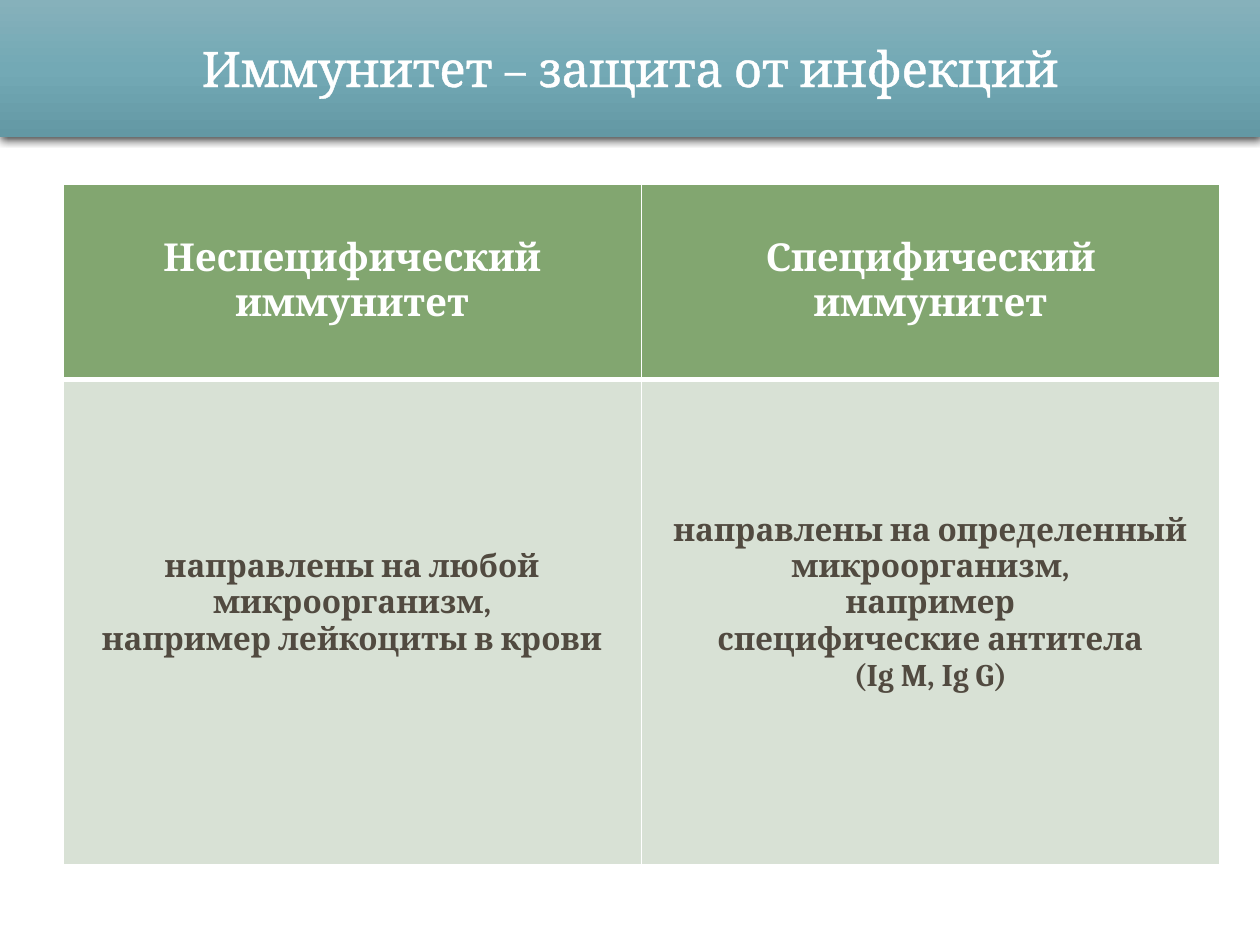
from dataclasses import dataclass

from lxml import etree
from pptx import Presentation
from pptx import util as u
from pptx.dml.color import RGBColor
from pptx.enum import shapes, text
from pptx.oxml import parse_xml
from pptx.oxml.ns import nsdecls, qn


@dataclass(frozen=True)
class Theme:
    font: str = "Cambria"
    white: str = "FFFFFF"
    body_text: str = "514A40"
    header_fill: str = "82A670"
    body_fill: str = "D8E1D5"
    shadow: str = "000000"
    band: tuple = ((0, "86B1BB"), (50, "73A9B5"), (100, "6398A4"))
    title_size: int = 28
    header_size: int = 22
    body_size: int = 18


def solid_line(tag, width, color):
    return parse_xml(
        f'<a:{tag} {nsdecls("a")} w="{u.Pt(width)}"><a:solidFill>'
        f'<a:srgbClr val="{color}"/></a:solidFill></a:{tag}>')


def set_attributes(target, values):
    for name, value in values.items():
        setattr(target, name, value)


class SlideBuilder:
    def __init__(self, slide, theme):
        self.slide = slide
        self.theme = theme

    def fill_text(self, frame, lines, size, color, bold=False):
        frame.text = "\n".join(lines)
        frame.word_wrap = True
        for paragraph in frame.paragraphs:
            paragraph.alignment = text.PP_ALIGN.CENTER
            for run in paragraph.runs:
                set_attributes(run.font, {
                    "name": self.theme.font, "size": u.Pt(size), "bold": bold})
                run.font.color.rgb = RGBColor.from_string(color)

    def title(self, wording, left, top, width, height):
        title = self.slide.shapes.title
        set_attributes(title, {"left": left, "top": top, "width": width, "height": height})
        theme = self.theme
        self.fill_text(title.text_frame, [wording], theme.title_size, theme.white)
        title.text_frame.vertical_anchor = text.MSO_ANCHOR.MIDDLE
        title.text_frame.auto_size = text.MSO_AUTO_SIZE.NONE
        properties = title.text_frame.paragraphs[0].runs[0].font._element
        properties.insert(0, solid_line("ln", 1.45, theme.white))

    def band(self, left, top, width, height):
        """Draw the gradient band with its shadow behind the title."""
        band = self.slide.shapes.add_shape(
            shapes.MSO_SHAPE.RECTANGLE, left, top, width, height)
        band.line.fill.background()
        band.fill.background()
        band.shadow.inherit = False
        properties = band.element.spPr
        stops = "".join(
            f'<a:gs pos="{place * 1000}"><a:srgbClr val="{color}"/></a:gs>'
            for place, color in self.theme.band)
        properties.replace(properties.find(qn("a:noFill")), parse_xml(
            f'<a:gradFill {nsdecls("a")}><a:gsLst>{stops}</a:gsLst>'
            '<a:lin ang="5400000" scaled="0"/></a:gradFill>'))
        shadow = etree.SubElement(
            properties.find(qn("a:effectLst")), qn("a:outerShdw"),
            blurRad=str(u.Pt(4.5)), dist=str(u.Pt(1.5)), dir="5400000", rotWithShape="0")
        color = etree.SubElement(shadow, qn("a:srgbClr"), val=self.theme.shadow)
        etree.SubElement(color, qn("a:alpha"), val="63000")
        self.slide.shapes.title.element.addprevious(band.element)

    def cell(self, cell, lines, is_header):
        theme = self.theme
        widths = {"lnL": 1, "lnR": 1, "lnT": 1 if is_header else 3,
                  "lnB": 3 if is_header else 1}
        properties = cell._tc.get_or_add_tcPr()
        for tag, width in widths.items():
            properties.append(solid_line(tag, width, theme.white))
        cell.fill.solid()
        cell.fill.fore_color.rgb = RGBColor.from_string(
            theme.header_fill if is_header else theme.body_fill)
        cell.vertical_anchor = text.MSO_ANCHOR.MIDDLE
        if is_header:
            self.fill_text(cell.text_frame, lines, theme.header_size, theme.white, bold=True)
        else:
            cell.margin_bottom = u.Inches(0.34)
            self.fill_text(cell.text_frame, lines, theme.body_size, theme.body_text, bold=True)

    def table(self, rows, left, top, width, row_heights):
        table = self.slide.shapes.add_table(
            len(rows), len(rows[0]), left, top, width, sum(row_heights)).table
        table.horz_banding = False
        for row, height in zip(table.rows, row_heights):
            row.height = height
        for row_index, row in enumerate(rows):
            for column_index, lines in enumerate(row):
                self.cell(table.cell(row_index, column_index), lines, row_index == 0)


def main():
    presentation = Presentation()
    presentation.slide_width = u.Inches(10)
    presentation.slide_height = u.Inches(7.5)
    title_only = presentation.slide_layouts[5]
    builder = SlideBuilder(presentation.slides.add_slide(title_only), Theme())

    builder.band(0, 0, presentation.slide_width, u.Inches(1.09))
    builder.title("Иммунитет – защита от инфекций",
                  u.Inches(1.13), u.Inches(0.25), u.Inches(7.74), u.Inches(0.57))
    rows = [
        [["Неспецифический иммунитет"], ["Специфический иммунитет"]],
        [["направлены на любой микроорганизм,", "например лейкоциты в крови"],
         ["направлены на определенный микроорганизм,", "например",
          "специфические антитела", "(Ig M, Ig G)"]],
    ]
    builder.table(rows, u.Inches(0.5), u.Inches(1.46), u.Inches(9.18),
                  [u.Inches(1.55), u.Inches(3.85)])
    presentation.save("out.pptx")


if __name__ == "__main__":
    main()
